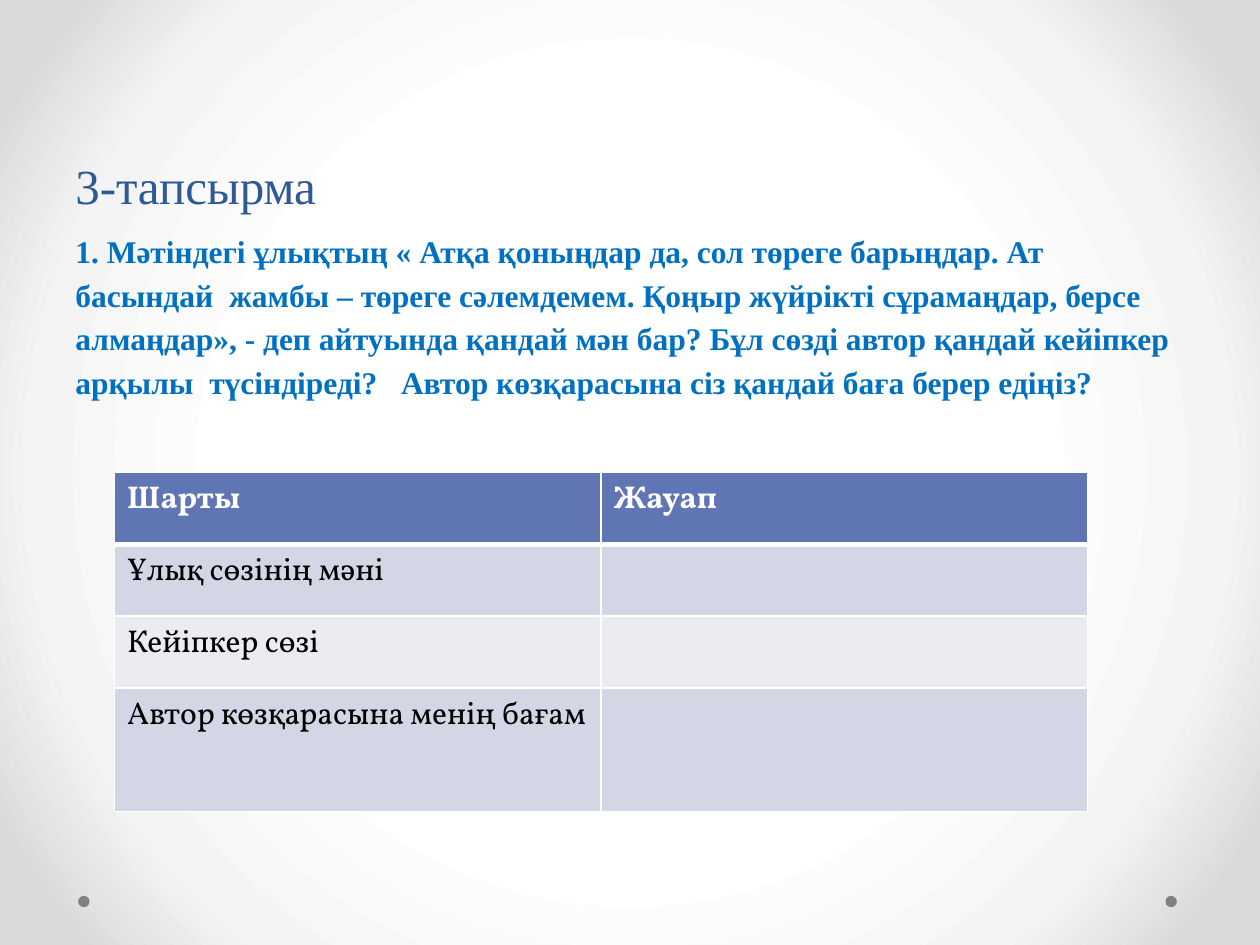
"""Builds the third task slide: a question above a two-column answer table."""
from dataclasses import dataclass

from lxml import etree
from pptx import Presentation
from pptx.dml.color import RGBColor
from pptx.enum import shapes, text
from pptx.oxml import parse_xml
from pptx.oxml.ns import qn
from pptx.util import Inches, Length, Pt

NAMESPACES = (
    'xmlns:a="http://schemas.openxmlformats.org/drawingml/2006/main" '
    'xmlns:p="http://schemas.openxmlformats.org/presentationml/2006/main"'
)


@dataclass(frozen=True)
class Theme:
    heading_font: str = "Times New Roman"
    table_font: str = "Vollkorn"
    heading: str = "2F5897"
    question: str = "0070C0"
    dot: str = "808080"
    header_fill: str = "6076B4"
    odd_fill: str = "D2D6E5"
    even_fill: str = "EAECF2"
    white: str = "FFFFFF"
    black: str = "000000"
    heading_size: int = 28
    body_size: int = 18
    border: int = 1
    header_border: int = 3
    backdrop: tuple = ((50, "FFFFFF"), (76, "F4F4F4"), (92, "DADADA"))


@dataclass(frozen=True)
class AnswerRow:
    label: str
    answer: str
    height: Length
    fill: str
    color: str
    bold: bool = False


THEME = Theme()
TITLE = "3-тапсырма"
QUESTION = (
    "1. Мәтіндегі ұлықтың « Атқа қоныңдар да, сол төреге барыңдар. "
    "Ат басындай  жамбы – төреге сәлемдемем. Қоңыр жүйрікті сұрамаңдар, "
    "берсе алмаңдар», - деп айтуында қандай мән бар? Бұл сөзді автор қандай "
    "кейіпкер арқылы  түсіндіреді?   Автор көзқарасына сіз қандай баға берер едіңіз?"
)
ROWS = (
    AnswerRow("Шарты", "Жауап", Inches(0.57), THEME.header_fill, THEME.white, True),
    AnswerRow("Ұлық сөзінің мәні", "", Inches(0.57), THEME.odd_fill, THEME.black),
    AnswerRow("Кейіпкер сөзі", "", Inches(0.57), THEME.even_fill, THEME.black),
    AnswerRow("Автор көзқарасына менің бағам", "", Inches(0.98), THEME.odd_fill, THEME.black),
)


def write(frame, words: str, *, font: str, size: int, color: str,
          bold: bool = False, spacing=None) -> None:
    """Put one formatted paragraph into a text frame."""
    paragraph = frame.paragraphs[0]
    if spacing is not None:
        paragraph.line_spacing = spacing
    paragraph.font.size = Pt(size)
    if words:
        run = paragraph.add_run()
        run.text = words
        run.font.name = font
        run.font.size = Pt(size)
        run.font.bold = bold
        run.font.color.rgb = RGBColor.from_string(color)


def add_text(slide, words: str, top: Length, height: Length, anchor, **style) -> None:
    """Add a full-width wrapping text box."""
    frame = slide.shapes.add_textbox(Inches(0.5), top, Inches(9), height).text_frame
    frame.word_wrap = True
    frame.vertical_anchor = anchor
    write(frame, words, **style)


def paint_backdrop(slide) -> None:
    """Fill the background with a circular gradient."""
    stops = "".join(
        f'<a:gs pos="{place * 1000}"><a:srgbClr val="{color}"/></a:gs>'
        for place, color in THEME.backdrop
    )
    backdrop = parse_xml(
        f'<p:bg {NAMESPACES}><p:bgPr><a:gradFill rotWithShape="1"><a:gsLst>{stops}</a:gsLst>'
        '<a:path path="circle"><a:fillToRect l="50000" t="50000" r="50000" b="50000"/></a:path>'
        '</a:gradFill><a:effectLst/></p:bgPr></p:bg>'
    )
    slide.element.cSld.insert(0, backdrop)


def add_dot(slide, left: Length) -> None:
    """Add a small footer dot."""
    side = Inches(0.09)
    dot = slide.shapes.add_shape(shapes.MSO_SHAPE.OVAL, left, Inches(7.11), side, side)
    dot.shadow.inherit = False
    dot.fill.solid()
    dot.fill.fore_color.rgb = RGBColor.from_string(THEME.dot)
    dot.line.fill.background()


def set_borders(cell, top: int, bottom: int) -> None:
    """Draw white cell borders with the given top and bottom weights."""
    properties = cell._tc.get_or_add_tcPr()
    weights = {"lnL": THEME.border, "lnR": THEME.border, "lnT": top, "lnB": bottom}
    for place, (edge, weight) in enumerate(weights.items()):
        line = etree.Element(qn(f"a:{edge}"), w=str(Pt(weight)))
        fill = etree.SubElement(line, qn("a:solidFill"))
        etree.SubElement(fill, qn("a:srgbClr"), val=THEME.white)
        properties.insert(place, line)


def add_answer_table(slide, rows: tuple[AnswerRow, ...]) -> None:
    """Add the table of conditions and answers."""
    height = sum(row.height for row in rows)
    table = slide.shapes.add_table(
        len(rows), 2, Inches(0.91), Inches(3.75), Inches(7.72), height
    ).table
    for index, row in enumerate(rows):
        table.rows[index].height = row.height
        for column, words in enumerate((row.label, row.answer)):
            cell = table.cell(index, column)
            cell.fill.solid()
            cell.fill.fore_color.rgb = RGBColor.from_string(row.fill)
            set_borders(
                cell,
                top=THEME.header_border if index == 1 else THEME.border,
                bottom=THEME.header_border if index == 0 else THEME.border,
            )
            write(cell.text_frame, words, font=THEME.table_font,
                  size=THEME.body_size, color=row.color, bold=row.bold)


def main() -> None:
    """Build and save the slide."""
    deck = Presentation()
    deck.slide_width, deck.slide_height = Inches(10), Inches(7.5)
    slide = deck.slides.add_slide(deck.slide_layouts[6])
    paint_backdrop(slide)
    for left in (Inches(9.25), Inches(0.62)):
        add_dot(slide, left)
    add_text(slide, TITLE, Inches(0), Inches(1.75), text.MSO_ANCHOR.BOTTOM,
             font=THEME.heading_font, size=THEME.heading_size,
             color=THEME.heading, spacing=Pt(58))
    add_text(slide, QUESTION, Inches(1.75), Inches(4.95), text.MSO_ANCHOR.TOP,
             font=THEME.heading_font, size=THEME.body_size,
             color=THEME.question, bold=True, spacing=1.15)
    add_answer_table(slide, ROWS)
    deck.save("out.pptx")


if __name__ == "__main__":
    main()
